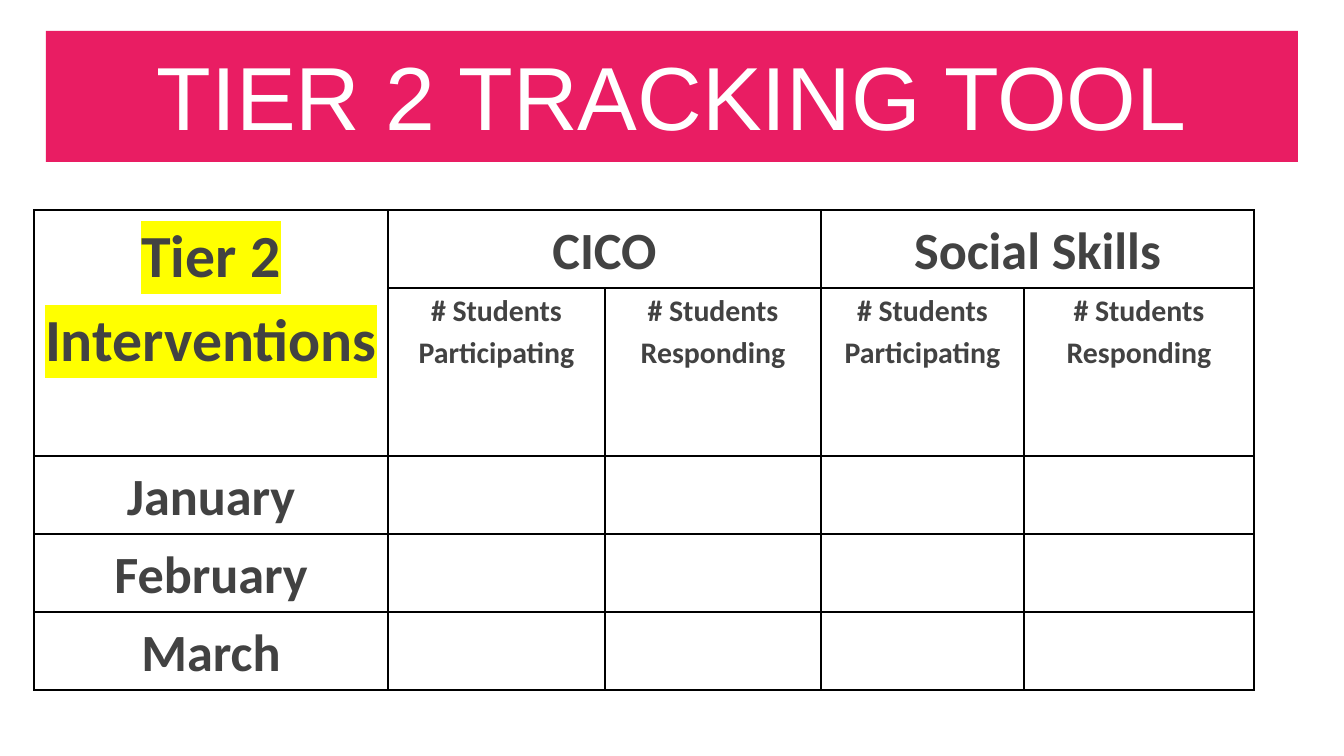
import pptx
import pptx.dml.color
import pptx.enum.shapes
import pptx.enum.text
import pptx.oxml
import pptx.oxml.ns
import pptx.util

TITLE = "TIER 2 TRACKING TOOL"
CORNER = "Tier 2 Interventions"
INTERVENTIONS = ["CICO", "Social Skills"]
MEASURES = ["# Students Participating", "# Students Responding"]
MONTHS = ["January", "February", "March"]

PAGE_SIZE = (1344, 756)
BANNER = (46, 31, 1252, 131)
TABLE_LEFT, TABLE_TOP = 34, 210
COLUMN_WIDTHS = [354, 217, 216, 203, 230]
ROW_HEIGHTS = [78, 168] + [78] * len(MONTHS)
PINK, WHITE, GRAY, BLACK, YELLOW = "E91D63", "FFFFFF", "424242", "000000", "FFFF00"


def px(count):
    """Return pixels as EMU."""
    return pptx.util.Emu(round(count * 914400 / 134.4))


def color(code):
    """Return a colour from its hex string."""
    return pptx.dml.color.RGBColor.from_string(code)


def style(para, name, size, code, bold):
    """Centre a paragraph and set its font."""
    para.alignment = pptx.enum.text.PP_ALIGN.CENTER
    para.font.name = name
    para.font.size = pptx.util.Pt(size)
    para.font.color.rgb = color(code)
    para.font.bold = bold


def add_banner(page):
    """Draw the title banner."""
    banner = page.shapes.add_shape(pptx.enum.shapes.MSO_SHAPE.RECTANGLE, *map(px, BANNER))
    banner.shadow.inherit = False
    banner.fill.solid()
    banner.fill.fore_color.rgb = color(PINK)
    banner.line.fill.background()
    frame = banner.text_frame
    frame.word_wrap = True
    frame.vertical_anchor = pptx.enum.text.MSO_ANCHOR.BOTTOM
    frame.margin_left = frame.margin_right = pptx.util.Inches(0.1)
    frame.margin_top = frame.margin_bottom = pptx.util.Inches(0.1)
    frame.text = TITLE
    style(frame.paragraphs[0], "Arial", 48, WHITE, False)


def format_cell(cell):
    """Clear a cell's fill and give it thin black borders and margins."""
    cell.margin_left = cell.margin_right = pptx.util.Inches(0.07)
    cell.margin_top = cell.margin_bottom = 0
    properties = cell._tc.get_or_add_tcPr()
    for side in ("lnL", "lnR", "lnT", "lnB"):
        properties.append(pptx.oxml.parse_xml(
            f'<a:{side} {pptx.oxml.ns.nsdecls("a")} w="12700"><a:solidFill>'
            f'<a:srgbClr val="{BLACK}"/></a:solidFill></a:{side}>'))
    cell.fill.background()


def write(cell, text, size):
    """Write a bold centred label in a cell."""
    cell.text = text
    para = cell.text_frame.paragraphs[0]
    style(para, "Calibri", size, GRAY, True)
    para.line_spacing = 1.15
    para.space_after = pptx.util.Pt(10)


def highlight(span, code):
    """Put a highlight colour behind a run."""
    span._r.get_or_add_rPr().append(pptx.oxml.parse_xml(
        f'<a:highlight {pptx.oxml.ns.nsdecls("a")}><a:srgbClr val="{code}"/></a:highlight>'))


def add_tracker(page):
    """Build the tracking table."""
    table = page.shapes.add_table(
        len(ROW_HEIGHTS), len(COLUMN_WIDTHS), px(TABLE_LEFT), px(TABLE_TOP),
        px(sum(COLUMN_WIDTHS)), px(sum(ROW_HEIGHTS))).table
    table.first_row = table.horz_banding = False
    for column, width in zip(table.columns, COLUMN_WIDTHS):
        column.width = px(width)
    for row, height in zip(table.rows, ROW_HEIGHTS):
        row.height = px(height)
    for cell in table.iter_cells():
        format_cell(cell)

    corner = table.cell(0, 0)
    corner.merge(table.cell(1, 0))
    write(corner, CORNER, 32)
    highlight(corner.text_frame.paragraphs[0].runs[0], YELLOW)
    for group, intervention in enumerate(INTERVENTIONS):
        first = 1 + group * len(MEASURES)
        heading = table.cell(0, first)
        heading.merge(table.cell(0, first + len(MEASURES) - 1))
        write(heading, intervention, 28)
        for offset, measure in enumerate(MEASURES):
            write(table.cell(1, first + offset), measure, 16)
    for row, month in enumerate(MONTHS, start=2):
        write(table.cell(row, 0), month, 28)


def main():
    """Build and save the slide."""
    deck = pptx.Presentation()
    deck.slide_width, deck.slide_height = map(px, PAGE_SIZE)
    page = deck.slides.add_slide(deck.slide_layouts[6])
    add_banner(page)
    add_tracker(page)
    deck.save("out.pptx")


if __name__ == "__main__":
    main()
